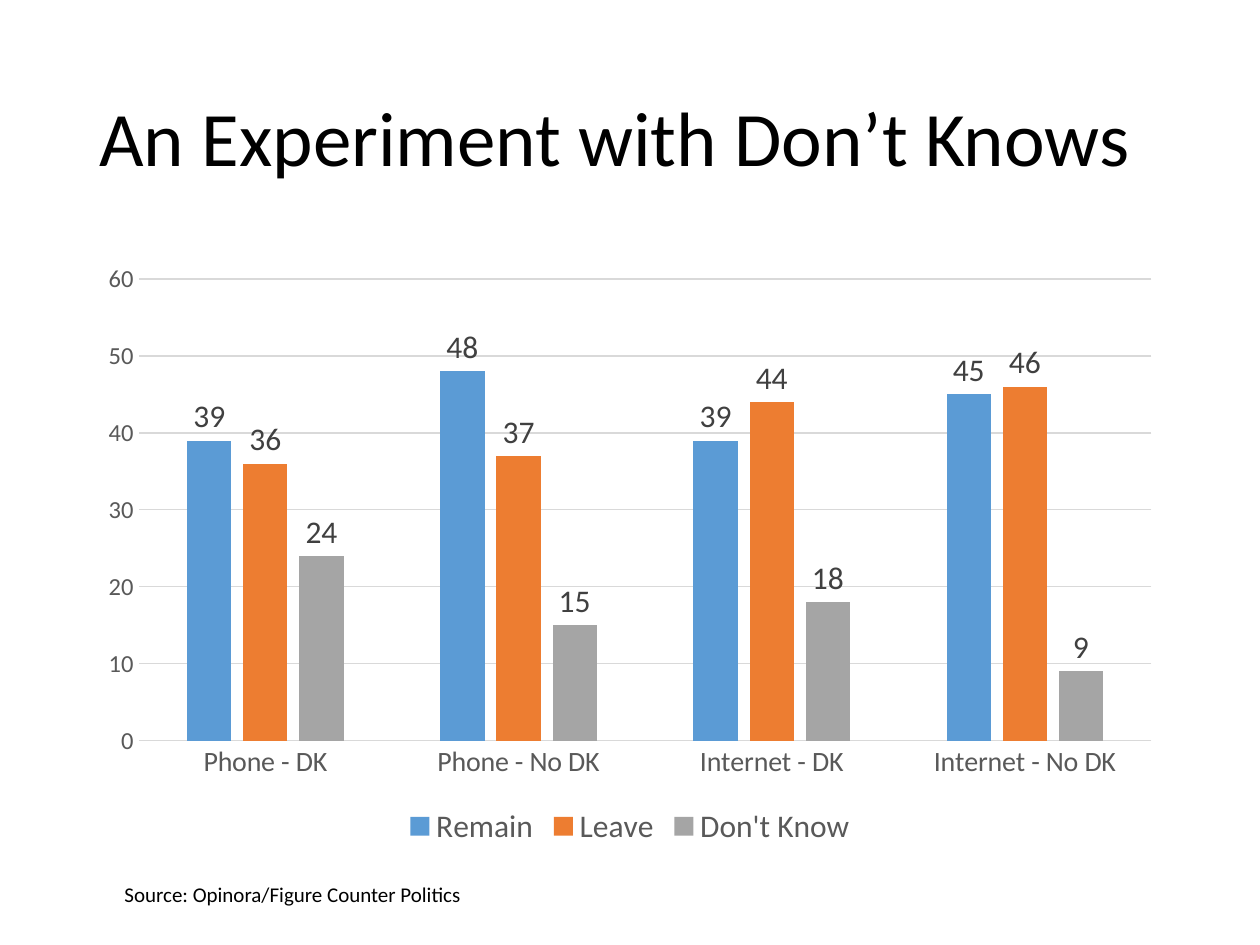
from pptx import Presentation
from pptx.chart.data import CategoryChartData
from pptx.dml.color import RGBColor
from pptx.enum.chart import XL_CHART_TYPE, XL_LABEL_POSITION, XL_LEGEND_POSITION, XL_TICK_MARK
from pptx.enum.text import MSO_ANCHOR, MSO_AUTO_SIZE, PP_ALIGN
from pptx.util import Cm, Pt

COLUMNS = XL_CHART_TYPE.COLUMN_CLUSTERED
OUTSIDE_END = XL_LABEL_POSITION.OUTSIDE_END
BOTTOM = XL_LEGEND_POSITION.BOTTOM
NO_TICK = XL_TICK_MARK.NONE

BLACK = RGBColor(0x00, 0x00, 0x00)
DARK_GREY = RGBColor(0x40, 0x40, 0x40)
GREY = RGBColor(0x59, 0x59, 0x59)
LINE_GREY = RGBColor(0xD9, 0xD9, 0xD9)
BLUE = RGBColor(0x5B, 0x9B, 0xD5)
ORANGE = RGBColor(0xED, 0x7D, 0x31)
SILVER = RGBColor(0xA5, 0xA5, 0xA5)

FONT = "Calibri"
TITLE = "An Experiment with Don’t Knows"
SOURCE = "Source: Opinora/Figure Counter Politics"
CATEGORIES = ["Phone - DK", "Phone - No DK", "Internet - DK", "Internet - No DK"]
SERIES = [
    ("Remain", (39, 48, 39, 45), BLUE),
    ("Leave", (36, 37, 44, 46), ORANGE),
    ("Don't Know", (24, 15, 18, 9), SILVER),
]
LEFT, WIDTH = Cm(1.75), Cm(21.9)


def set_font(font, size, color):
    font.name = FONT
    font.size = Pt(size)
    font.bold = False
    font.color.rgb = color


def set_line(line):
    line.color.rgb = LINE_GREY
    line.width = Pt(0.75)


def add_title(slide):
    sp = slide.shapes.title
    sp.left, sp.top, sp.width, sp.height = LEFT, Cm(1.02), WIDTH, Cm(3.68)
    tf = sp.text_frame
    tf.text = TITLE
    tf.vertical_anchor = MSO_ANCHOR.MIDDLE
    p = tf.paragraphs[0]
    p.alignment = PP_ALIGN.LEFT
    p.line_spacing = 0.9
    set_font(p.font, 44, BLACK)


def add_poll_chart(slide):
    data = CategoryChartData()
    data.categories = CATEGORIES
    for name, values, _ in SERIES:
        data.add_series(name, values)
    chart = slide.shapes.add_chart(COLUMNS, LEFT, Cm(5.08), WIDTH, Cm(12.09), data).chart
    set_font(chart.font, 10, BLACK)
    chart.has_title = False

    chart.has_legend = True
    chart.legend.position = BOTTOM
    chart.legend.include_in_layout = False
    set_font(chart.legend.font, 18, GREY)

    for axis, size in ((chart.category_axis, 16), (chart.value_axis, 14)):
        axis.major_tick_mark = axis.minor_tick_mark = NO_TICK
        set_font(axis.tick_labels.font, size, GREY)
    set_line(chart.category_axis.format.line)
    value_axis = chart.value_axis
    value_axis.minimum_scale, value_axis.maximum_scale = 0, 60
    value_axis.major_unit = 10
    value_axis.format.line.fill.background()
    set_line(value_axis.major_gridlines.format.line)

    plot = chart.plots[0]
    plot.gap_width, plot.overlap = 219, -27
    plot.vary_by_categories = False
    for series, (_, _, color) in zip(plot.series, SERIES):
        series.format.fill.solid()
        series.format.fill.fore_color.rgb = color
        series.invert_if_negative = False
        labels = series.data_labels
        labels.show_value = True
        labels.position = OUTSIDE_END
        set_font(labels.font, 18, DARK_GREY)


def add_source(slide):
    tf = slide.shapes.add_textbox(Cm(2.26), Cm(17.65), Cm(14.43), Cm(0.76)).text_frame
    tf.word_wrap = True
    tf.auto_size = MSO_AUTO_SIZE.SHAPE_TO_FIT_TEXT
    tf.text = SOURCE
    set_font(tf.paragraphs[0].font, 12, BLACK)


def main():
    prs = Presentation()
    prs.slide_width, prs.slide_height = Cm(25.4), Cm(19.05)
    title_only = prs.slide_layouts[5]
    slide = prs.slides.add_slide(title_only)
    add_title(slide)
    add_poll_chart(slide)
    add_source(slide)
    prs.save("out.pptx")


if __name__ == "__main__":
    main()
